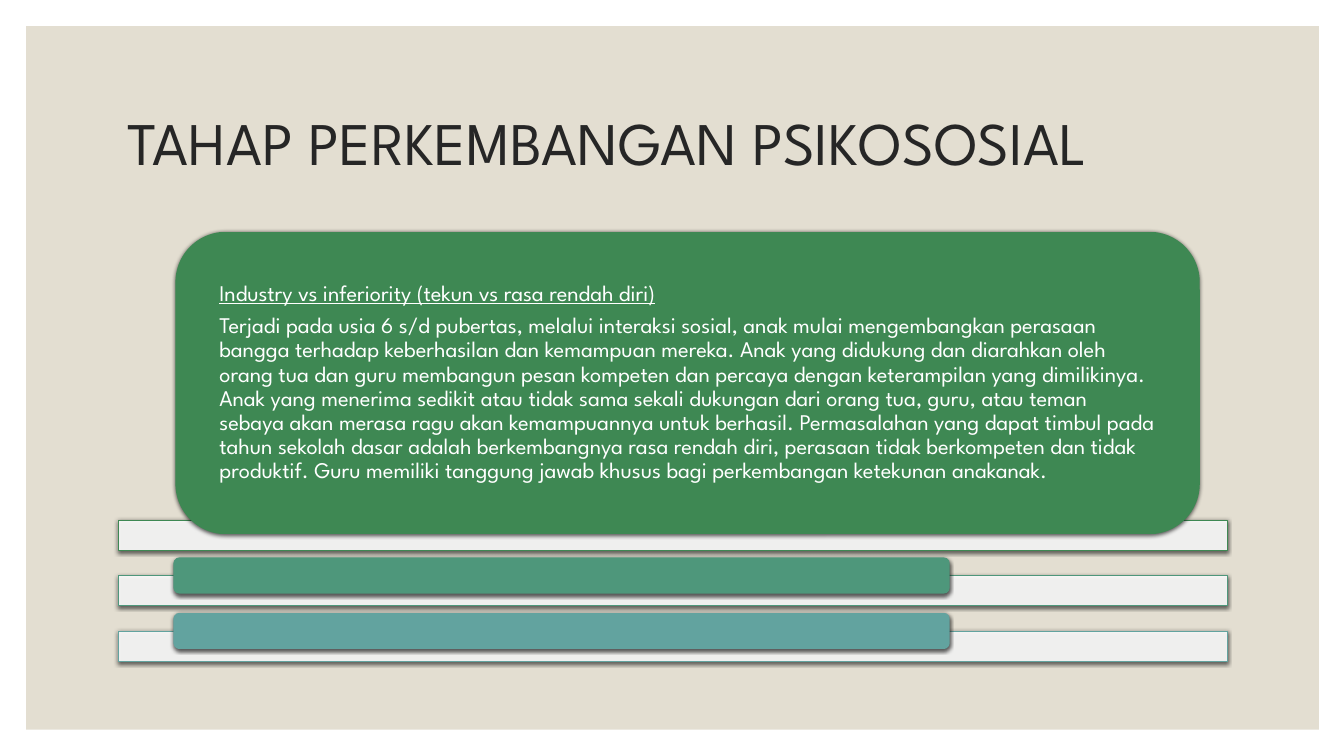
from lxml import etree
from pptx import Presentation
from pptx.dml.color import RGBColor
from pptx.enum.shapes import MSO_SHAPE
from pptx.enum.text import MSO_ANCHOR, PP_ALIGN
from pptx.oxml import parse_xml
from pptx.oxml.ns import nsdecls, qn
from pptx.util import Emu, Pt

PX = 9144
FONT = "League Spartan"
SHADOW = (
    f'<a:effectLst {nsdecls("a")}><a:outerShdw blurRad="38100" dist="12700" dir="5400000" '
    'rotWithShape="0"><a:srgbClr val="000000"><a:alpha val="63000"/></a:srgbClr>'
    "</a:outerShdw></a:effectLst>"
)

TITLE = "TAHAP PERKEMBANGAN PSIKOSOSIAL"
HEADING = "Industry vs inferiority (tekun vs rasa rendah diri)"
BODY = (
    "Terjadi pada usia 6 s/d pubertas, melalui interaksi sosial, anak mulai mengembangkan "
    "perasaan bangga terhadap keberhasilan dan kemampuan mereka. Anak yang didukung dan "
    "diarahkan oleh orang tua dan guru membangun pesan kompeten dan percaya dengan "
    "keterampilan yang dimilikinya. Anak yang menerima sedikit atau tidak sama sekali "
    "dukungan dari orang tua, guru, atau teman sebaya akan merasa ragu akan kemampuannya "
    "untuk berhasil. Permasalahan yang dapat timbul pada tahun sekolah dasar adalah "
    "berkembangnya rasa rendah diri, perasaan tidak berkompeten dan tidak produktif. Guru "
    "memiliki tanggung jawab khusus bagi perkembangan ketekunan anakanak."
)


def color(value):
    return RGBColor.from_string(value)


def add_box(kind, left, top, width, height):
    box = page.shapes.add_shape(kind, *(Emu(n * PX) for n in (left, top, width, height)))
    box.shadow.inherit = False
    box.line.fill.background()
    return box


deck = Presentation()
deck.slide_width, deck.slide_height = Emu(1333 * PX), Emu(750 * PX)
page = deck.slides.add_slide(deck.slide_layouts[6])

panel = add_box(MSO_SHAPE.RECTANGLE, 26, 26, 1282, 698)
panel.fill.solid()
panel.fill.fore_color.rgb = color("E3DED1")

title = page.shapes.add_textbox(*(Emu(n * PX) for n in (117, 70, 1100, 150)))
title.text_frame.word_wrap = True
title.text_frame.vertical_anchor = MSO_ANCHOR.MIDDLE
para = title.text_frame.paragraphs[0]
para.text = TITLE
para.line_spacing = 0.9
para.font.name = FONT
para.font.size = Pt(43.2)
para.font.color.rgb = color("262626")

stages = [
    ("3E8853", "3C8951", (174, 230, 1016, 300)),
    ("4E977B", "4C987A", (172, 553, 770, 36)),
    ("62A39F", "60A39F", (172, 608, 770, 36)),
]
pills = []
for index, (start, end, place) in enumerate(stages):
    bar = add_box(MSO_SHAPE.RECTANGLE, 117, 516 + 55 * index, 1100, 30)
    bar.fill.solid()
    bar.fill.fore_color.rgb = color("FFFFFF")
    white = bar.fill._xPr.find(qn("a:solidFill"))[0]
    etree.SubElement(white, qn("a:alpha")).set("val", "90000")
    bar.line.color.rgb = color(start)
    bar.line.width = Pt(0.5)

    pill = add_box(MSO_SHAPE.ROUNDED_RECTANGLE, *place)
    pill.fill.gradient()
    pill.fill.gradient_angle = 270
    for stop, shade in zip(pill.fill.gradient_stops, (start, end)):
        stop.color.rgb = color(shade)
    pills.append(pill)

    for box in (bar, pill):
        effects = box._element.spPr.find(qn("a:effectLst"))
        box._element.spPr.replace(effects, parse_xml(SHADOW))

frame = pills[0].text_frame
frame.word_wrap = True
frame.vertical_anchor = MSO_ANCHOR.MIDDLE
frame.margin_left = frame.margin_right = Emu(29 * PX)
frame.margin_top = frame.margin_bottom = 0
frame.text = f"{HEADING}\n{BODY}"
for para in frame.paragraphs:
    para.alignment = PP_ALIGN.LEFT
    para.line_spacing = 0.9
    para.space_after = Pt(5.6)
    para.font.name = FONT
    para.font.size = Pt(16)
    para.font.color.rgb = color("FFFFFF")
frame.paragraphs[0].runs[0].font.underline = True

deck.save("out.pptx")
